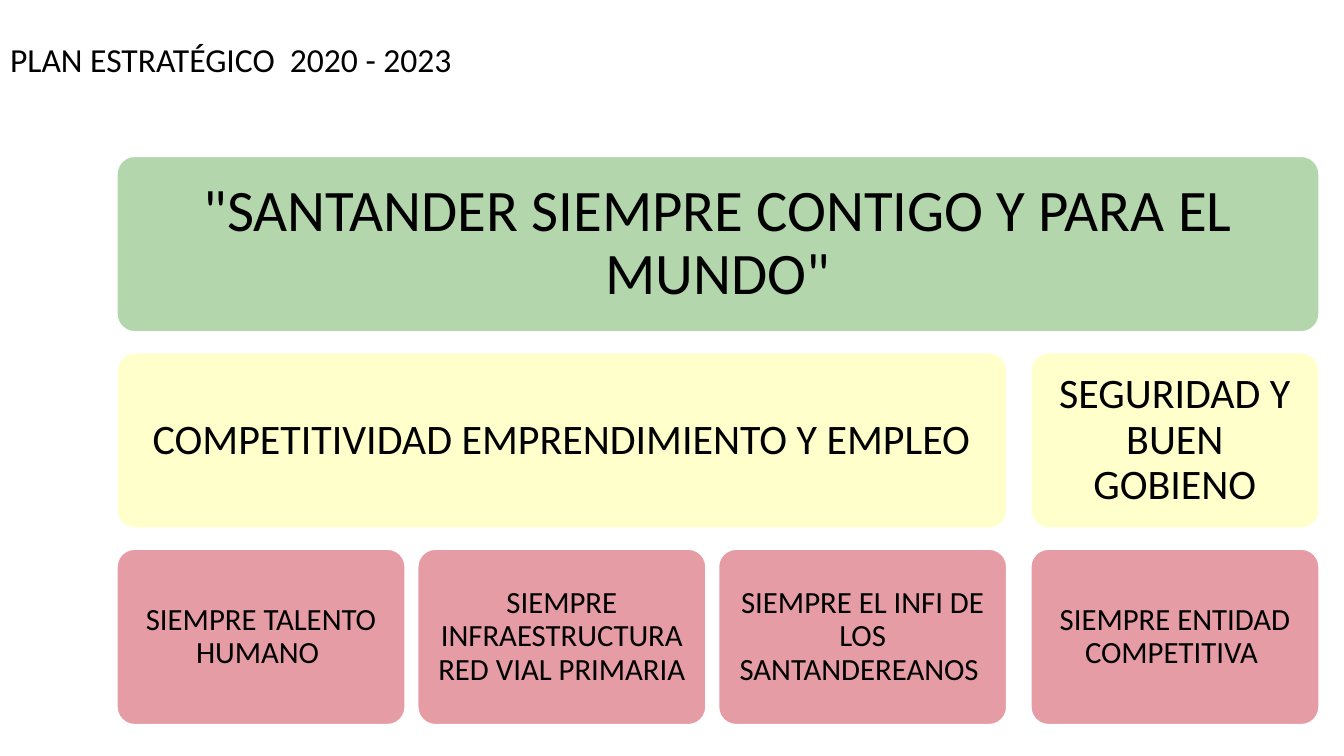
"""Build the strategic plan slide as three tiers of rounded boxes."""
from pptx import Presentation
from pptx.dml.color import RGBColor
from pptx.enum.shapes import MSO_SHAPE
from pptx.enum.text import MSO_ANCHOR, MSO_AUTO_SIZE, PP_ALIGN
from pptx.util import Cm, Pt

ROUNDED = MSO_SHAPE.ROUNDED_RECTANGLE
MIDDLE = MSO_ANCHOR.MIDDLE
LEFT, CENTER = PP_ALIGN.LEFT, PP_ALIGN.CENTER
NO_AUTOFIT = MSO_AUTO_SIZE.NONE
TITLE_ONLY = 5

COLORS = {
    "text": "000000",
    "outline": "FFFFFF",
    "slogan": "B3D6AC",
    "axis": "FFFFCC",
    "program": "E69CA4",
}
FONT = "Calibri"
FIRST_TOP, TIER_PITCH, BOX_HEIGHT = 3.94, 4.95, 4.42
FIRST_LEFT, COLUMN_PITCH, COLUMN_WIDTH = 2.95, 7.58, 7.26
AXIS_EXTRA_GAP = 0.29
LAST_COLUMN = 3

TIERS = [
    ("slogan", 42, [
        (0, 3, "\"SANTANDER SIEMPRE CONTIGO Y PARA EL MUNDO\""),
    ]),
    ("axis", 30, [
        (0, 2, "COMPETITIVIDAD EMPRENDIMIENTO Y EMPLEO"),
        (3, 3, "SEGURIDAD Y BUEN GOBIENO"),
    ]),
    ("program", 22, [
        (0, 0, "SIEMPRE TALENTO HUMANO "),
        (1, 1, "SIEMPRE INFRAESTRUCTURA RED VIAL PRIMARIA"),
        (2, 2, "SIEMPRE EL INFI DE LOS SANTANDEREANOS "),
        (3, 3, "SIEMPRE ENTIDAD COMPETITIVA "),
    ]),
]


def rgb(name):
    """Return the named colour."""
    return RGBColor.from_string(COLORS[name])


def column_left(column):
    """Return the left edge of a column in centimetres."""
    extra = AXIS_EXTRA_GAP if column == LAST_COLUMN else 0
    return FIRST_LEFT + column * COLUMN_PITCH + extra


def write_text(frame, text, size, alignment):
    """Write one paragraph into a vertically centred text frame."""
    frame.word_wrap = True
    frame.auto_size = NO_AUTOFIT
    frame.vertical_anchor = MIDDLE
    para = frame.paragraphs[0]
    para.alignment = alignment
    para.line_spacing = 0.9
    span = para.add_run()
    span.text = text
    span.font.name = FONT
    span.font.size = Pt(size)
    span.font.color.rgb = rgb("text")


def add_title(page, text):
    """Place and fill the title placeholder."""
    title = page.shapes.title
    title.left, title.top = Cm(0), Cm(0)
    title.width, title.height = Cm(19.25), Cm(3.12)
    write_text(title.text_frame, text, 24, LEFT)


def add_box(page, tier, first, last, text, color, size):
    """Add a rounded box that spans the given columns of a tier."""
    left = column_left(first)
    width = column_left(last) + COLUMN_WIDTH - left
    top = FIRST_TOP + tier * TIER_PITCH
    box = page.shapes.add_shape(
        ROUNDED, Cm(left), Cm(top), Cm(width), Cm(BOX_HEIGHT))
    box.adjustments[0] = 0.1
    box.shadow.inherit = False
    box.fill.solid()
    box.fill.fore_color.rgb = rgb(color)
    box.line.color.rgb = rgb("outline")
    box.line.width = Pt(1)
    frame = box.text_frame
    inset = Cm(size / 100)
    frame.margin_left = frame.margin_right = inset
    frame.margin_top = frame.margin_bottom = inset
    write_text(frame, text, size, CENTER)


def main():
    """Build and save the deck."""
    deck = Presentation()
    deck.slide_width, deck.slide_height = Cm(33.87), Cm(19.05)
    page = deck.slides.add_slide(deck.slide_layouts[TITLE_ONLY])
    add_title(page, "PLAN ESTRATÉGICO  2020 - 2023")
    for tier, (color, size, boxes) in enumerate(TIERS):
        for first, last, text in boxes:
            add_box(page, tier, first, last, text, color, size)
    deck.save("out.pptx")


if __name__ == "__main__":
    main()
